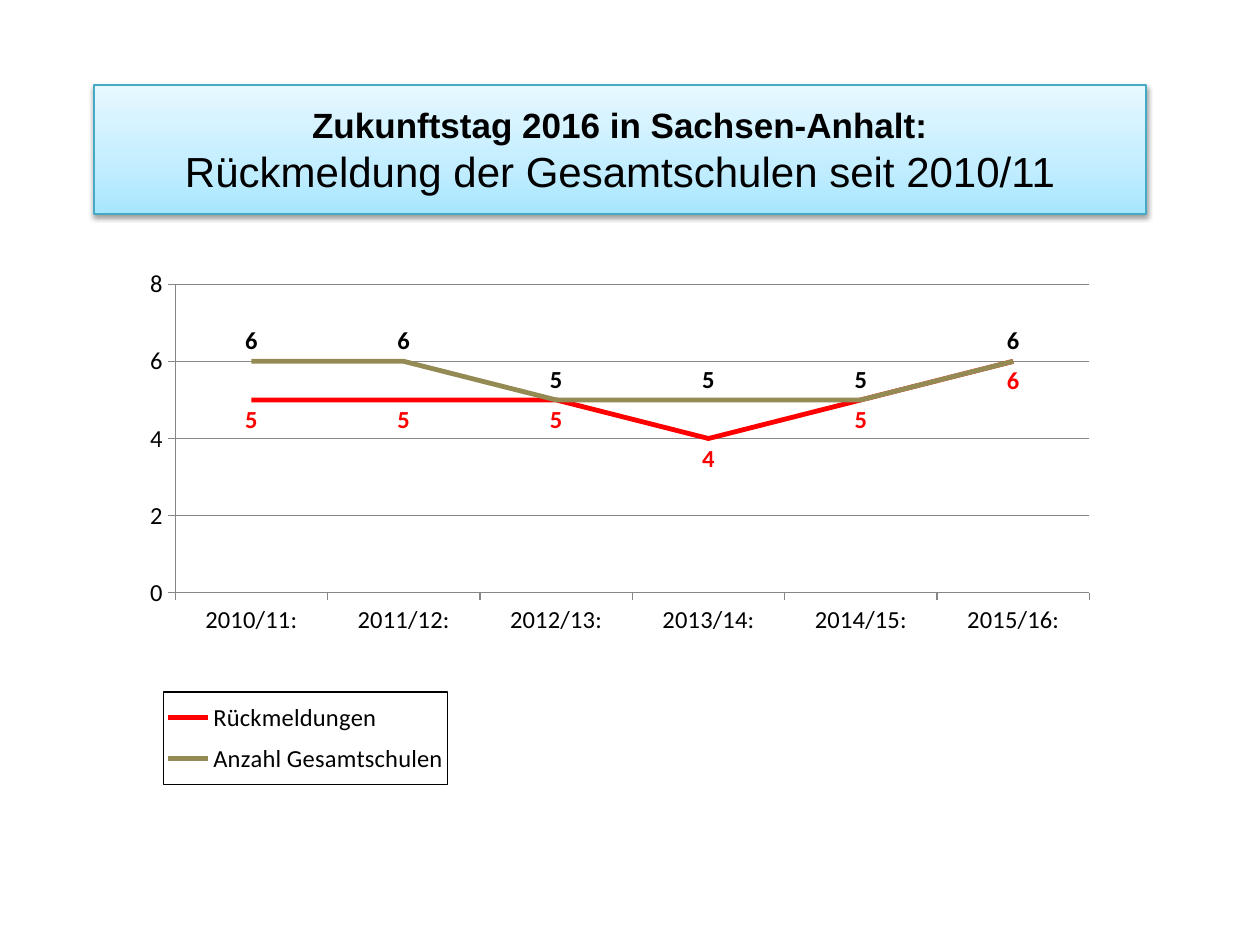
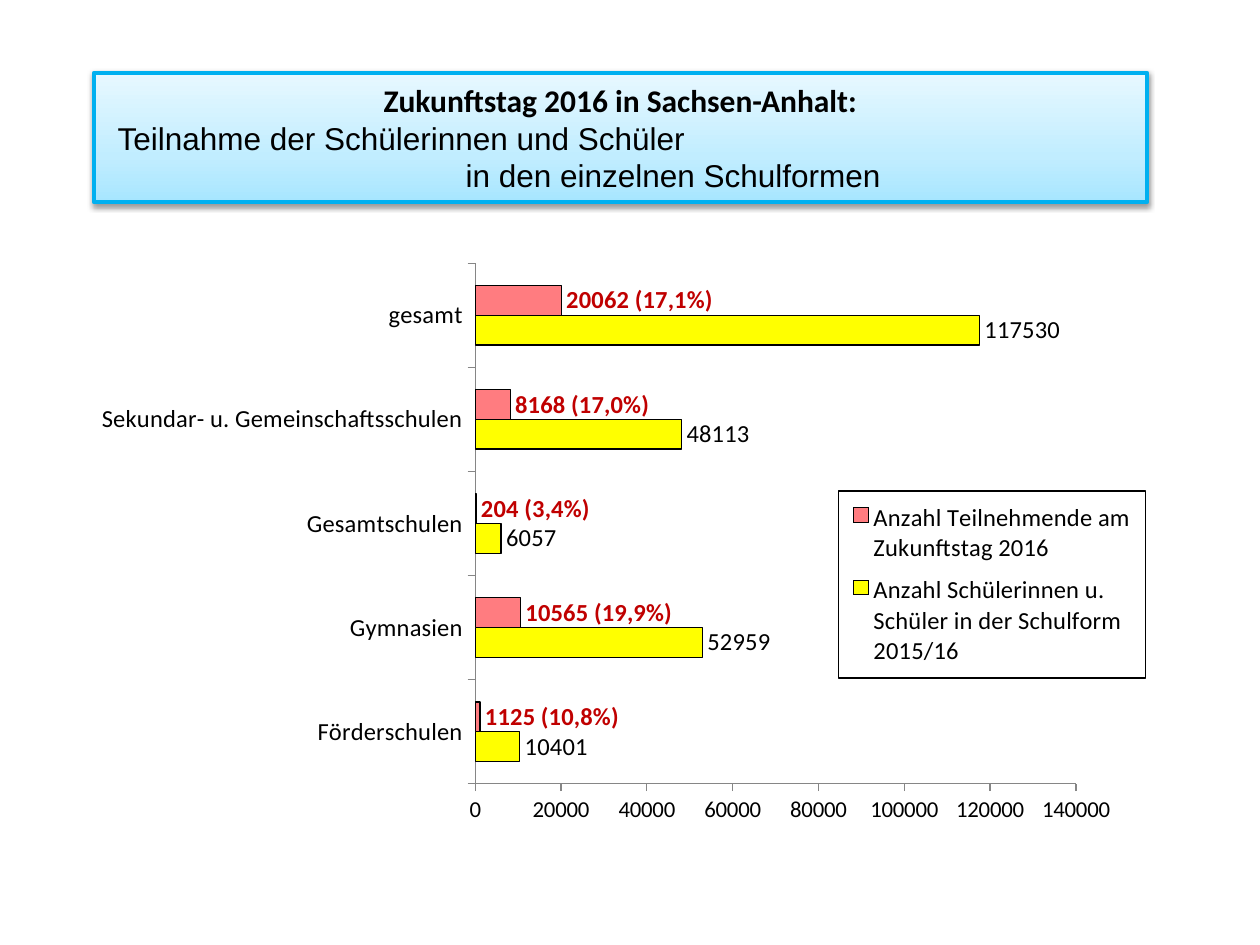
from copy import deepcopy

from lxml import etree
from pptx import Presentation
from pptx import util as u
from pptx.chart.data import CategoryChartData
from pptx.dml.color import RGBColor
from pptx.enum import chart as ch
from pptx.enum import text
from pptx.oxml.ns import qn

PX = u.Inches(1) / 126
COLOURS = {
    "black": "000000", "axis": "868686", "red": "FF0000", "olive": "948A54",
    "yellow": "FFFF00", "salmon": "FF7C80", "dark red": "C00000",
    "teal": "46AAC5", "sky": "00B0F0",
}
BAND_STOPS = [(0, "A7E6FF"), (0.35, "C1EDFF"), (1, "E7F8FF")]
HEADING = "Zukunftstag 2016 in Sachsen-Anhalt:"


def px(length):
    return u.Emu(round(length * PX))


def rgb(name):
    return RGBColor.from_string(COLOURS[name])


def place(shape, box):
    shape.left, shape.top, shape.width, shape.height = map(px, box)


def set_font(font, size, colour="black", bold=False, name="Calibri"):
    font.size, font.bold, font.name = u.Pt(size), bold, name
    font.color.rgb = rgb(colour)


def set_line(line, colour, width):
    line.color.rgb = rgb(colour)
    line.width = u.Pt(width)


def style_band(band, border, border_width):
    """Gives the title its blue gradient, border and soft shadow."""
    band.fill.gradient()
    band.fill.gradient_angle = 90
    properties = band.element.spPr
    stop_list = properties.find(".//" + qn("a:gsLst"))
    stop_list.append(deepcopy(stop_list[0]))
    for stop, (position, colour) in zip(band.fill.gradient_stops, BAND_STOPS):
        stop.position = position
        stop.color.rgb = RGBColor.from_string(colour)
    set_line(band.line, border, border_width)
    band.shadow.inherit = False
    shadow = etree.SubElement(
        properties.find(qn("a:effectLst")), qn("a:outerShdw"),
        blurRad="40000", dist="20000", dir="5400000", rotWithShape="0")
    colour = etree.SubElement(shadow, qn("a:srgbClr"), val=COLOURS["black"])
    etree.SubElement(colour, qn("a:alpha"), val="38000")


def add_title(slide, box, border, lines):
    """Each line is (text, size, font, bold, left indent or None to centre)."""
    band = slide.shapes.title
    place(band, box)
    style_band(band, *border)
    frame = band.text_frame
    frame.text = "\n".join(line[0] for line in lines)
    frame.auto_size = text.MSO_AUTO_SIZE.NONE
    frame.vertical_anchor = text.MSO_ANCHOR.MIDDLE
    for paragraph, (_, size, font, bold, indent) in zip(frame.paragraphs, lines):
        paragraph.alignment = text.PP_ALIGN.CENTER
        if indent is not None:
            paragraph.alignment = text.PP_ALIGN.LEFT
            paragraph._p.get_or_add_pPr().set("marL", str(px(indent)))
        set_font(paragraph.runs[0].font, size, bold=bold, name=font)


def set_layout(parent, index, fractions, inner=False):
    """Fixes a plot area or legend at fractions of the chart's size."""
    for old in parent.findall(qn("c:layout")):
        parent.remove(old)
    layout = etree.Element(qn("c:layout"))
    manual = etree.SubElement(layout, qn("c:manualLayout"))
    settings = [("layoutTarget", "inner")] if inner else []
    settings += [("xMode", "edge"), ("yMode", "edge")]
    settings += zip("xywh", fractions)
    for tag, value in settings:
        etree.SubElement(manual, qn("c:" + tag), val=str(value))
    parent.insert(index, layout)


def style_axis(axis, size, gridlines=False):
    axis.has_major_gridlines = gridlines
    axis.major_tick_mark = ch.XL_TICK_MARK.OUTSIDE
    axis.minor_tick_mark = ch.XL_TICK_MARK.NONE
    set_font(axis.tick_labels.font, size)
    set_line(axis.format.line, "axis", 0.75)
    if gridlines:
        set_line(axis.major_gridlines.format.line, "axis", 0.75)


def add_chart(slide, kind, box, categories, series, plot_area, legend_area):
    data = CategoryChartData()
    data.categories = categories
    for name, values in series:
        data.add_series(name, values)
    chart = slide.shapes.add_chart(kind, *map(px, box), data).chart
    set_font(chart.font, 10)
    chart.has_title = False
    chart.plots[0].vary_by_categories = False
    set_layout(chart._chartSpace.chart.plotArea, 0, plot_area, inner=True)

    chart.has_legend = True
    legend = chart.legend
    legend.position = ch.XL_LEGEND_POSITION.BOTTOM
    legend.include_in_layout = False
    set_font(legend.font, 14)
    set_layout(legend._element, 1, legend_area)
    properties = etree.Element(qn("c:spPr"))
    border = etree.SubElement(properties, qn("a:ln"), w=str(u.Pt(0.75)))
    fill = etree.SubElement(border, qn("a:solidFill"))
    etree.SubElement(fill, qn("a:srgbClr"), val=COLOURS["black"])
    legend._element.find(qn("c:txPr")).addprevious(properties)
    return chart


def label_values(series, position, colour="black", bold=False):
    labels = series.data_labels
    labels.show_value = True
    labels.position = position
    set_font(labels.font, 14, colour, bold)


def add_feedback_chart(slide):
    chart = add_chart(
        slide, ch.XL_CHART_TYPE.LINE, (105, 265, 1032, 536),
        [f"{year}/{year - 1999}:" for year in range(2010, 2016)],
        [("Rückmeldungen", (5, 5, 5, 4, 5, 6)),
         ("Anzahl Gesamtschulen", (6, 6, 5, 5, 5, 6))],
        (0.068, 0.036, 0.886, 0.576), (0.057, 0.797, 0.275, 0.172))
    style_axis(chart.category_axis, 14)
    style_axis(chart.value_axis, 14, gridlines=True)
    chart.value_axis.minimum_scale, chart.value_axis.maximum_scale = 0, 8
    chart.value_axis.major_unit = 2
    feedback, schools = chart.plots[0].series
    for series, colour in ((feedback, "red"), (schools, "olive")):
        series.smooth = False
        series.marker.style = ch.XL_MARKER_STYLE.NONE
        set_line(series.format.line, colour, 2.75)
    label_values(feedback, ch.XL_LABEL_POSITION.BELOW, "red", True)
    label_values(schools, ch.XL_LABEL_POSITION.ABOVE, bold=True)


def add_participation_chart(slide):
    participants = (1125, 10565, 204, 8168, 20062)
    shares = ("10,8", "19,9", "3,4", "17,0", "17,1")
    chart = add_chart(
        slide, ch.XL_CHART_TYPE.BAR_CLUSTERED, (95, 204, 1071, 645),
        ["Förderschulen", "Gymnasien", "Gesamtschulen",
         "Sekundar- u. Gemeinschaftsschulen", "gesamt"],
        [("Anzahl Schülerinnen u. Schüler in der Schulform 2015/16",
          (10401, 52959, 6057, 48113, 117530)),
         ("Anzahl Teilnehmende am Zukunftstag 2016", participants)],
        (0.355, 0.092, 0.561, 0.807), (0.694, 0.445, 0.287, 0.29))
    style_axis(chart.category_axis, 14)
    style_axis(chart.value_axis, 13)
    chart.value_axis.minimum_scale, chart.value_axis.maximum_scale = 0, 140000
    chart.value_axis.major_unit = 20000
    bars = chart.plots[0]
    bars.gap_width, bars.overlap = 150, 0
    outside = ch.XL_LABEL_POSITION.OUTSIDE_END
    fills = ("yellow", "salmon")
    label_styles = (("black", False), ("dark red", True))
    for series, fill, label_style in zip(bars.series, fills, label_styles):
        series.format.fill.solid()
        series.format.fill.fore_color.rgb = rgb(fill)
        set_line(series.format.line, "black", 0.75)
        label_values(series, outside, *label_style)
    for index, (count, share) in enumerate(zip(participants, shares)):
        label = bars.series[1].points[index].data_label
        label.text_frame.text = f"{count} ({share}%)"
        set_font(label.text_frame.paragraphs[0].runs[0].font, 14, "dark red", True)
        label.position = outside


def main():
    deck = Presentation()
    deck.slide_width, deck.slide_height = px(1260), px(945)
    title_only = deck.slide_layouts[5]

    feedback = deck.slides.add_slide(title_only)
    add_title(feedback, (94, 85, 1052, 129), ("teal", 0.75), [
        (HEADING, 20, "Arial", True, None),
        ("Rückmeldung der Gesamtschulen seit 2010/11", 24, "Arial", False, None)])
    add_feedback_chart(feedback)

    participation = deck.slides.add_slide(title_only)
    add_title(participation, (94, 73, 1053, 129), ("sky", 2.75), [
        (HEADING, 18, "Calibri", True, None),
        ("Teilnahme der Schülerinnen und Schüler", 18, "Arial", False, 11),
        ("in den einzelnen Schulformen", 18, "Arial", False, 359)])
    add_participation_chart(participation)

    deck.save("out.pptx")


if __name__ == "__main__":
    main()
